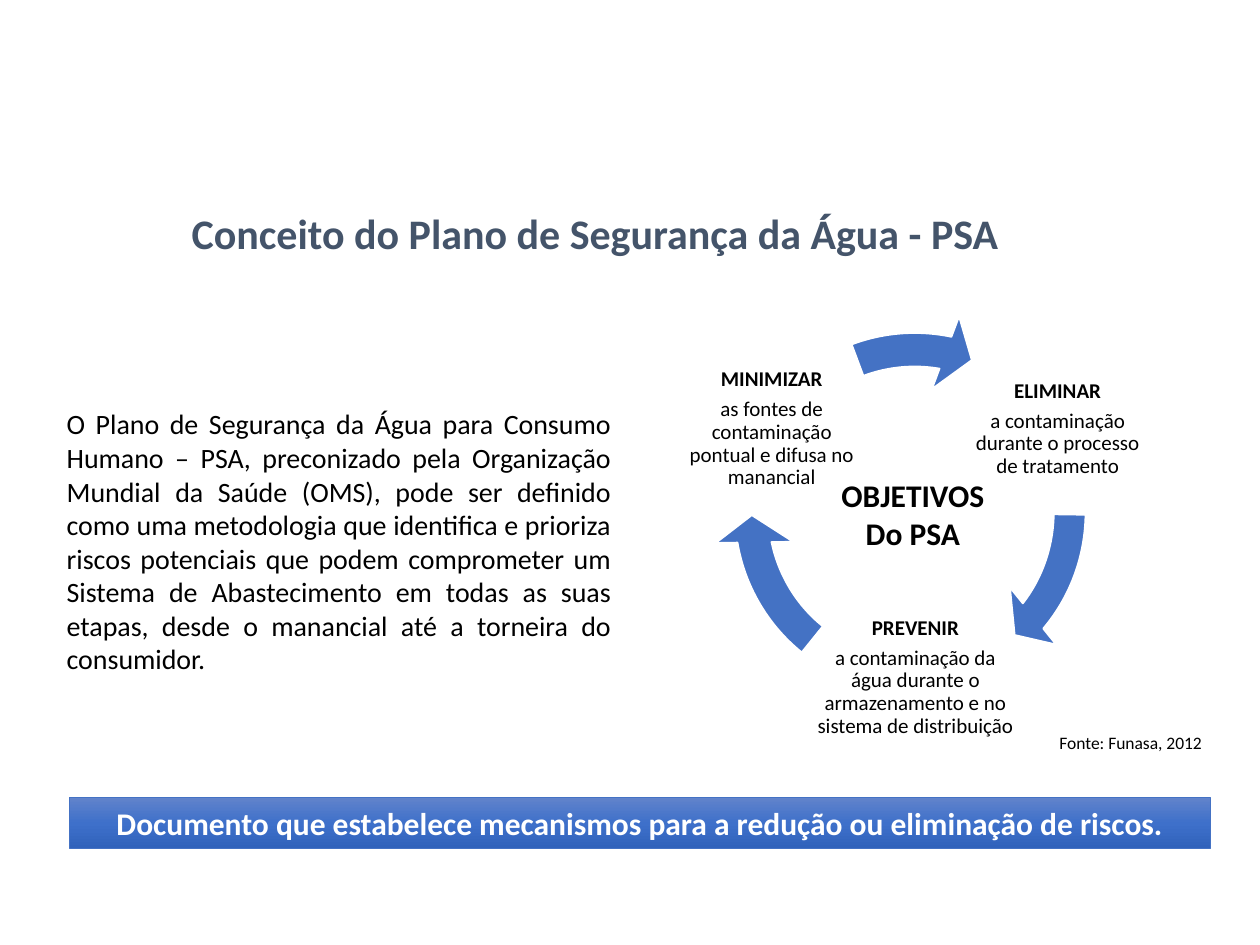
from copy import deepcopy

from pptx import Presentation
from pptx.dml.color import RGBColor
from pptx.enum import shapes, text
from pptx.util import Pt

COLORS = {
    "black": "000000", "white": "FFFFFF", "title": "44546A", "blue": "4472C4",
    "band_top": "6183CB", "band_middle": "3E70CA", "band_bottom": "3062BB",
}
CENTER = text.PP_ALIGN.CENTER
GROW = text.MSO_AUTO_SIZE.SHAPE_TO_FIT_TEXT


def rgb(name):
    """Return the named colour."""
    return RGBColor.from_string(COLORS[name])


def apply(target, formats):
    """Set every attribute in a dict of format values."""
    for key, value in formats.items():
        setattr(target, key, value)


def write(shape, lines, size, color="black", frame=None, **paragraph_format):
    """Write (wording, bold) lines into a shape."""
    body = shape.text_frame
    apply(body, {"word_wrap": True, "auto_size": GROW,
                 "vertical_anchor": text.MSO_ANCHOR.TOP, **(frame or {})})
    for index, (wording, bold) in enumerate(lines):
        paragraph = body.paragraphs[0] if index == 0 else body.add_paragraph()
        apply(paragraph, paragraph_format)
        run = paragraph.add_run()
        run.text = wording
        apply(run.font, {"name": "Calibri", "size": Pt(size), "bold": bold})
        run.font.color.rgb = rgb(color)


def add_text(slide, box, lines, size, **formats):
    """Add a text box with its lines."""
    write(slide.shapes.add_textbox(*map(Pt, box)), lines, size, **formats)


def add_band(slide, box, wording):
    """Add the gradient band with the closing statement."""
    band = slide.shapes.add_shape(shapes.MSO_SHAPE.RECTANGLE, *map(Pt, box))
    band.shadow.inherit = False
    band.fill.gradient()
    band.fill.gradient_angle = 270
    first = band.fill._fill._gradFill.gsLst[0]
    first.addnext(deepcopy(first))
    names = ("band_top", "band_middle", "band_bottom")
    for stop, name, position in zip(band.fill.gradient_stops, names, (0, 0.5, 1)):
        stop.color.rgb = rgb(name)
        stop.position = position
    band.line.color.rgb = rgb("blue")
    band.line.width = Pt(0.5)
    write(band, [(wording, True)], 18, color="white", alignment=CENTER)


def add_cycle_arrow(slide, box, head_angle, tail_angle):
    """Add one curved arrow of the cycle."""
    arrow = slide.shapes.add_shape(shapes.MSO_SHAPE.CIRCULAR_ARROW, *map(Pt, box))
    arrow.shadow.inherit = False
    for index, value in enumerate((0.083, 5.766, head_angle, tail_angle, 0.096)):
        arrow.adjustments[index] = value
    arrow.fill.solid()
    arrow.fill.fore_color.rgb = rgb("blue")
    arrow.line.color.rgb = rgb("white")
    arrow.line.width = Pt(1)


def add_cycle(slide, box):
    """Add the three objectives, their arrows and the heading at the centre."""
    left, top, width, height = box
    side = 97.2
    right_column = left + width - side
    ring = (left + 15.1, top, 230.4, 230.4)
    arrows = [
        ((left + 21.6, top + 2.2, 218.2, 225.4), 24.859, 0.531),
        (ring, 101.704, 77.376),
        (ring, 168.549, 149.686),
    ]
    objectives = [
        ((right_column, top + 18.7, side, side), "ELIMINAR",
         "a contaminação durante o processo de tratamento"),
        ((left + 71.3, top + height - side, 118.8, side), "PREVENIR",
         "a contaminação da água durante o armazenamento e no sistema de distribuição"),
        ((left, top + 18.7, side, side), "MINIMIZAR",
         "as fontes de contaminação pontual e difusa no manancial"),
    ]
    margins = ("margin_left", "margin_top", "margin_right", "margin_bottom")
    frame = {"auto_size": text.MSO_AUTO_SIZE.NONE,
             "vertical_anchor": text.MSO_ANCHOR.MIDDLE,
             **dict.fromkeys(margins, Pt(1.2))}
    for arrow in arrows:
        add_cycle_arrow(slide, *arrow)
    for place, verb, goal in objectives:
        add_text(slide, place, [(verb, True), (goal, False)], 12, frame=frame,
                 alignment=CENTER, line_spacing=0.9, space_after=Pt(4.2))
    add_text(slide, (left + 80.6, top + 90.7, side, 51.1),
             [("OBJETIVOS", True), ("Do PSA", True)], 18,
             frame={"word_wrap": False}, alignment=CENTER)


def main():
    """Build the slide and save it."""
    deck = Presentation()
    apply(deck, {"slide_width": Pt(720), "slide_height": Pt(540)})
    slide = deck.slides.add_slide(deck.slide_layouts[6])
    add_text(slide, (31, 229, 325.4, 162.7), [(
        "O Plano de Segurança da Água para Consumo Humano – PSA, preconizado pela "
        "Organização Mundial da Saúde (OMS), pode ser definido como uma metodologia "
        "que identifica e prioriza riscos potenciais que podem comprometer um Sistema "
        "de Abastecimento em todas as suas etapas, desde o manancial até a torneira "
        "do consumidor.", False)], 16, alignment=text.PP_ALIGN.JUSTIFY)
    add_text(slide, (82, 115.2, 516.2, 36),
             [("Conceito do Plano de Segurança da Água - PSA", True)], 24,
             color="title", alignment=CENTER)
    add_band(slide, (39.6, 455.8, 652.3, 29),
             "Documento que estabelece mecanismos para a redução ou eliminação de riscos.")
    add_cycle(slide, (392.4, 177.8, 260.6, 257.8))
    add_text(slide, (598.3, 414.7, 97.2, 19.4), [("Fonte: Funasa, 2012", False)], 10,
             frame={"word_wrap": False})
    deck.save("out.pptx")


if __name__ == "__main__":
    main()
